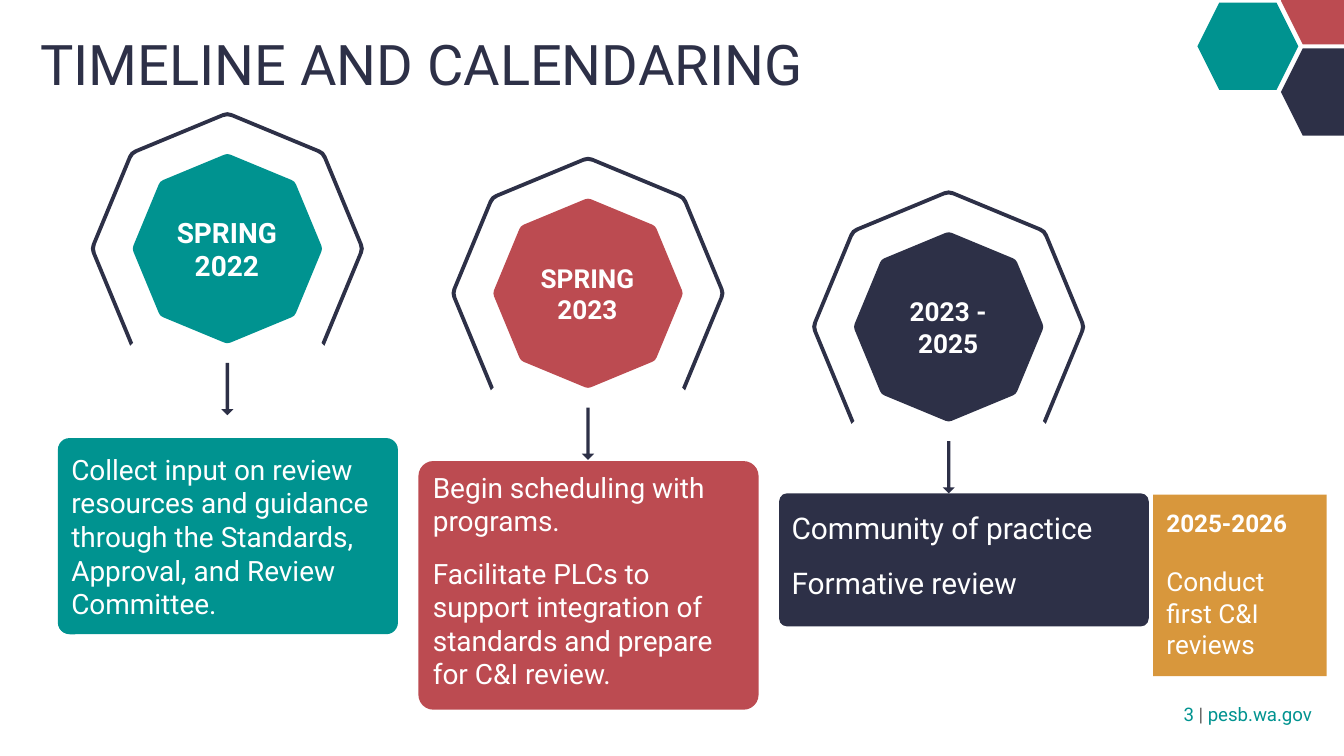
import math
from pptx import Presentation
from pptx.dml.color import RGBColor
from pptx.enum import shapes, text
from pptx.util import Pt

FONT = "Roboto"
TEAL, RED, NAVY, GOLD = "009390", "BC4B51", "2D3047", "D8973C"
WHITE, GRAY = "FFFFFF", "595959"
SHAPE = shapes.MSO_SHAPE
TOP, MIDDLE = text.MSO_ANCHOR.TOP, text.MSO_ANCHOR.MIDDLE
LEFT, CENTER, RIGHT = text.PP_ALIGN.LEFT, text.PP_ALIGN.CENTER, text.PP_ALIGN.RIGHT

TITLE = "TIMELINE AND CALENDARING"
FOOTER = [("3", TEAL), (" | ", GRAY), ("pesb.wa.gov", TEAL)]
HEXAGONS = [(641.5, 1.4, TEAL), (686.2, 25.9, NAVY), (686.2, -23, RED)]
STAGES = [
    dict(label="SPRING 2022", label_size=15, color=TEAL, cy=133.2,
         card=(234.7, 182.2, 105.1), body=(35.3, 240.5, 171.4, 93.6), size=15,
         lines=["Collect input on review resources and guidance through the "
                "Standards, Approval, and Review Committee."], after=0),
    dict(label="SPRING 2023", label_size=14, color=RED, cy=157.1,
         card=(247, 182.2, 133.2), body=(229, 264.2, 165.6, 93.6), size=15,
         lines=["Begin scheduling with programs.",
                "Facilitate PLCs to support integration of standards and "
                "prepare for C&I review."], after=0),
    dict(label="2023 - 2025", label_size=14, color=NAVY, cy=175.1,
         card=(264.3, 198, 71.3), body=(421.2, 269.3, 191.5, 56.2), size=16,
         lines=["Community of practice", "Formative review"], after=10),
]
FIRST_X, PITCH = 121.8, 193.2
OCTAGON_R, RING_OUTER, RING_INNER = 51, 73.6, 71.4

prs = Presentation()
prs.slide_width, prs.slide_height = Pt(720), Pt(405)
s = prs.slides.add_slide(prs.slide_layouts[6])


def rgb(color):
    return RGBColor.from_string(color)


def paint(sp, color):
    sp.shadow.inherit = False
    sp.fill.solid()
    sp.fill.fore_color.rgb = rgb(color)
    sp.line.fill.background()
    return sp


def add_shape(kind, x, y, w, h, color):
    return paint(s.shapes.add_shape(kind, Pt(x), Pt(y), Pt(w), Pt(h)), color)


def add_outline(points, color):
    pts = [(Pt(x), Pt(y)) for x, y in points]
    fb = s.shapes.build_freeform(*pts[0])
    fb.add_line_segments(pts[1:], close=True)
    return paint(fb.convert_to_shape(), color)


def set_frame(tf, inset_x, inset_y, anchor):
    tf.word_wrap = True
    tf.margin_left = tf.margin_right = Pt(inset_x)
    tf.margin_top = tf.margin_bottom = Pt(inset_y)
    tf.vertical_anchor = anchor
    return tf


def add_frame(x, y, w, h, inset_x, inset_y, anchor):
    sp = s.shapes.add_textbox(Pt(x), Pt(y), Pt(w), Pt(h))
    return set_frame(sp.text_frame, inset_x, inset_y, anchor)


def add_run(p, words, size, color, bold=False):
    r = p.add_run()
    r.text = words
    r.font.name, r.font.size, r.font.bold = FONT, Pt(size), bold
    r.font.color.rgb = rgb(color)


def add_paragraph(tf, first, align=LEFT, before=0, after=0):
    p = tf.paragraphs[0] if first else tf.add_paragraph()
    p.alignment, p.space_before, p.space_after = align, Pt(before), Pt(after)
    return p


def vertices(cx, cy, radius, angles):
    return [(cx + radius * math.sin(math.radians(a)),
             cy - radius * math.cos(math.radians(a))) for a in angles]


def soften(before, corner, after, cut=0.045):
    a, b = [tuple(c + (e - c) * cut for c, e in zip(corner, end))
            for end in (before, after)]
    mid = tuple((m + 2 * c + n) / 4 for m, c, n in zip(a, corner, b))
    return [a, mid, b]


def octagon(cx, cy):
    v = vertices(cx, cy, OCTAGON_R, range(0, 360, 45))
    return [pt for i in range(8) for pt in soften(v[i - 1], v[i], v[(i + 1) % 8])]


def arc(cx, cy, radius):
    v = vertices(cx, cy, radius, range(-135, 136, 45))
    bends = [pt for trio in zip(v, v[1:], v[2:]) for pt in soften(*trio)]
    return [v[0], *bends, v[-1]]


for x, y, color in HEXAGONS:
    add_shape(SHAPE.HEXAGON, x, y, 54, 46.8, color)

tf = add_frame(14.4, 8.6, 669.6, 45.4, 7.2, 7.2, TOP)
add_run(add_paragraph(tf, True), TITLE, 30, NAVY)

tf = add_frame(573.8, 367.2, 136.1, 31, 7.2, 7.2, MIDDLE)
p = add_paragraph(tf, True, RIGHT)
for words, color in FOOTER:
    add_run(p, words, 10, color)

for i, stage in enumerate(STAGES):
    cx, cy = FIRST_X + i * PITCH, stage["cy"]
    add_outline(octagon(cx, cy), stage["color"])
    add_outline(arc(cx, cy, RING_OUTER) + arc(cx, cy, RING_INNER)[::-1], NAVY)

    top, width, height = stage["card"]
    card = add_shape(SHAPE.ROUNDED_RECTANGLE, cx - 90.8, top, width, height,
                     stage["color"])
    card.adjustments[0] = 0.06

    arrow = add_shape(SHAPE.RIGHT_ARROW, cx - 14, cy + 72, 28, 6.5, NAVY)
    arrow.adjustments[0], arrow.adjustments[1] = 0.27, 0.5
    arrow.rotation = 90

    tf = add_frame(cx - 34.8, cy - 12.2, 69.1, 24.5, 2.9, 1.4, MIDDLE)
    add_run(add_paragraph(tf, True, CENTER), stage["label"],
            stage["label_size"], WHITE, True)

    tf = add_frame(*stage["body"], 2.9, 1.4, MIDDLE)
    for n, line in enumerate(stage["lines"]):
        p = add_paragraph(tf, n == 0, before=10 if n else 0,
                          after=stage["after"] if n else 0)
        add_run(p, line, stage["size"], WHITE)

review = add_shape(SHAPE.RECTANGLE, 617.8, 265, 92.9, 97.2, GOLD)
tf = set_frame(review.text_frame, 7.2, 7.2, TOP)
add_run(add_paragraph(tf, True), "2025-2026", 13, WHITE, True)
add_run(add_paragraph(tf, False, before=15.2, after=10),
        "Conduct first C&I reviews", 14, WHITE)

prs.save("out.pptx")
